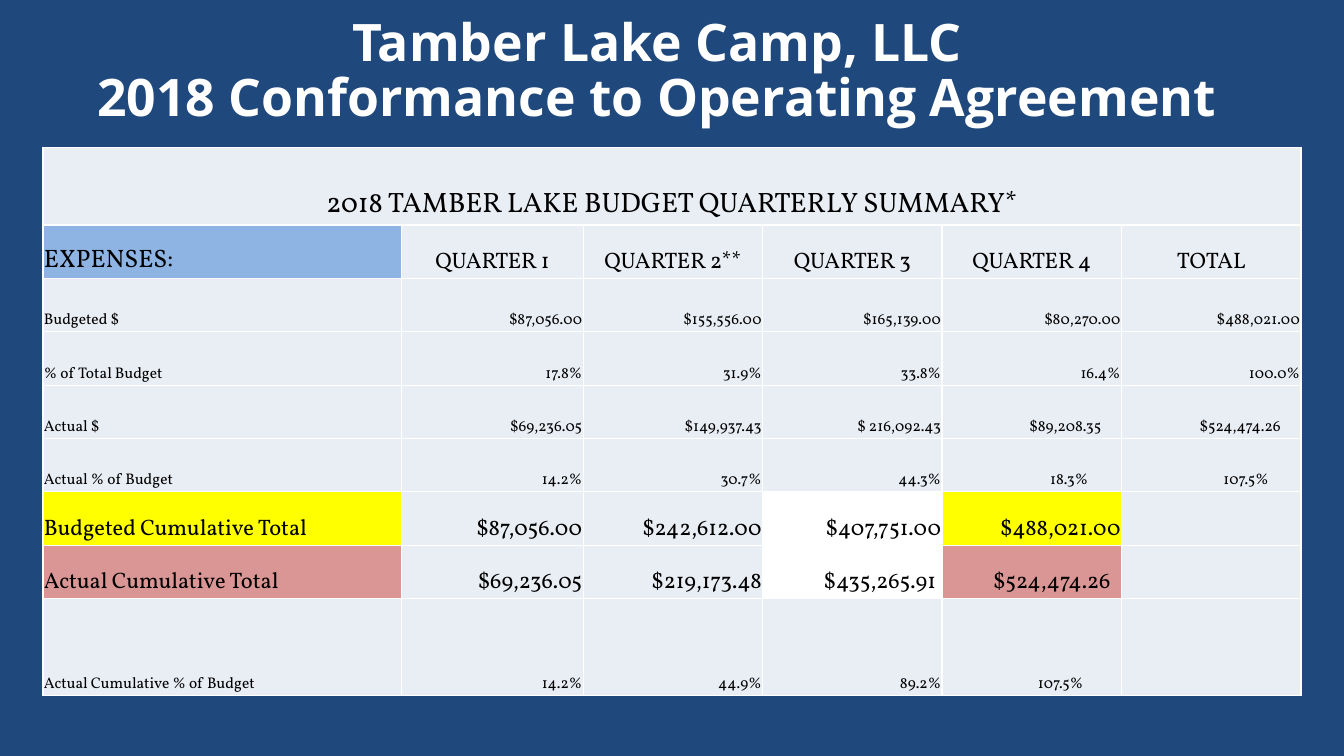
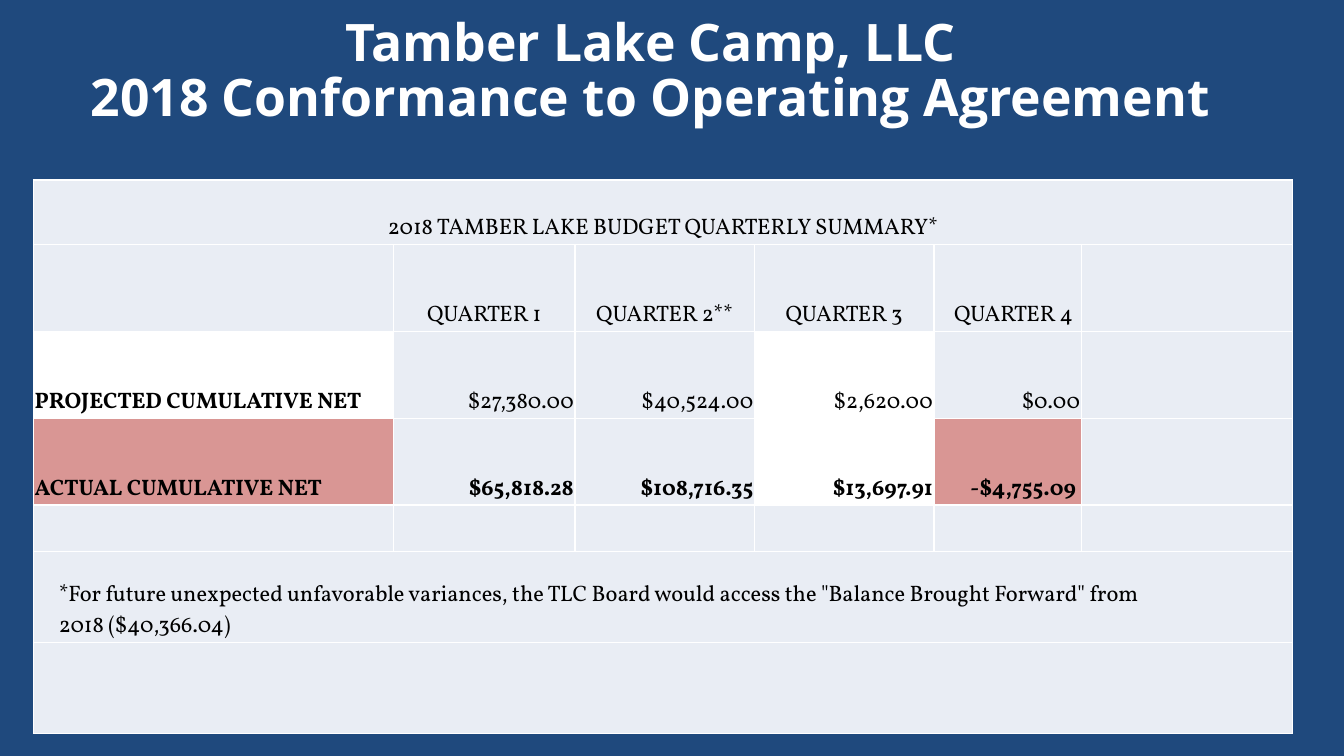
from dataclasses import dataclass

from lxml.etree import SubElement
from pptx import Presentation
from pptx.dml.color import RGBColor as Color
from pptx.enum.text import MSO_ANCHOR as Anchor, MSO_AUTO_SIZE as AutoSize, PP_ALIGN as Align
from pptx.oxml.ns import qn
from pptx.util import Inches, Pt


@dataclass(frozen=True)
class Theme:
    navy: str = "1F497D"
    white: str = "FFFFFF"
    black: str = "000000"
    mist: str = "E9EDF4"
    sky: str = "8EB4E3"
    yellow: str = "FFFF00"
    rose: str = "D99694"
    title_font: str = "Open Sans"
    table_font: str = "Vollkorn"
    title_size: float = 36.9
    banner_size: int = 20
    label_size: int = 18
    large_size: int = 16
    small_size: int = 11
    border: float = 1
    inset: float = 0.01


theme = Theme()


def write(frame, text, font=theme.table_font, size=theme.large_size, color=theme.black,
          bold=False, align=Align.LEFT, spacing=None):
    for number, line in enumerate(text.split("\n")):
        para = frame.add_paragraph() if number else frame.paragraphs[0]
        para.alignment = align
        para.line_spacing = spacing
        span = para.add_run()
        span.text = line
        span.font.name = font
        span.font.size = Pt(size)
        span.font.bold = bold
        span.font.color.rgb = Color.from_string(color)


def add_borders(cell):
    properties = cell._tc.get_or_add_tcPr()
    for side in ("a:lnL", "a:lnR", "a:lnT", "a:lnB"):
        line = SubElement(properties, qn(side), w=str(Pt(theme.border)))
        fill = SubElement(line, qn("a:solidFill"))
        SubElement(fill, qn("a:srgbClr"), val=theme.white)


quarters = ["QUARTER 1", "QUARTER 2**", "QUARTER 3", "QUARTER 4"]
banner = "2018 TAMBER LAKE BUDGET QUARTERLY SUMMARY*"
large, small = theme.large_size, theme.small_size

sheets = [
    {
        "place": (0.032, 0.195, 0.936, 0.725),
        "title_shift": 0.29,
        "columns": [3.56, 1.8, 1.78, 1.78, 1.78, 1.78],
        "heights": [0.77] + [0.53] * 7 + [0.96],
        "sizes": [theme.banner_size, large, small, small, small, small, large, large, small],
        "rows": [
            [banner],
            ["EXPENSES:", *quarters, "TOTAL"],
            ["Budgeted $", "$87,056.00", "$155,556.00", "$165,139.00", "$80,270.00", "$488,021.00"],
            ["% of Total Budget", "17.8%", "31.9%", "33.8%", "16.4%", "100.0%"],
            ["Actual $", "$69,236.05", "$149,937.43", "$ 216,092.43", "$89,208.35", "$524,474.26"],
            ["Actual % of Budget", "14.2%", "30.7%", "44.3%", "18.3%", "107.5%"],
            ["Budgeted Cumulative Total", "$87,056.00", "$242,612.00", "$407,751.00", "$488,021.00", ""],
            ["Actual Cumulative Total", "$69,236.05", "$219,173.48", "$435,265.91", "$524,474.26", ""],
            ["Actual Cumulative % of Budget", "14.2%", "44.9%", "89.2%", "107.5%", ""],
        ],
        "fills": {(1, 0): theme.sky, (6, 0): theme.yellow, (6, 3): theme.white, (6, 4): theme.yellow,
                  (7, 0): theme.rose, (7, 3): theme.white, (7, 4): theme.rose},
        "left_insets": {},
        "right_insets": {(4, 4): 0.2, (4, 5): 0.2, (5, 4): 0.33, (5, 5): 0.32,
                         (7, 3): 0.06, (7, 4): 0.11, (8, 4): 0.38},
        "label_cells": {(1, 0)},
        "bold_cells": set(),
    },
    {
        "place": (0.025, 0.238, 0.937, 0.732),
        "title_shift": 0.42,
        "columns": [3.57, 1.8, 1.78, 1.78, 1.46, 2.1],
        "heights": [0.64, 0.86, 0.86, 0.86, 0.46, 0.9, 0.9],
        "sizes": [large] * 7,
        "rows": [
            [banner],
            ["", *quarters, ""],
            ["PROJECTED CUMULATIVE NET", "$27,380.00", "$40,524.00", "$2,620.00", "$0.00", ""],
            ["ACTUAL CUMULATIVE NET", "$65,818.28", "$108,716.35", "$13,697.91", "-$4,755.09", ""],
            [""] * 6,
            ['*For future unexpected unfavorable variances, the TLC Board would access the '
             '"Balance Brought Forward" from\n2018 ($40,366.04)'],
            [""],
        ],
        "fills": {(2, 0): theme.white, (2, 3): theme.white, (3, 0): theme.rose,
                  (3, 3): theme.white, (3, 4): theme.rose},
        "left_insets": {(1, 4): 0.13, (5, 0): 0.25},
        "right_insets": {(3, 4): 0.05},
        "label_cells": set(),
        "bold_cells": {(2, 0)} | {(3, column) for column in range(5)},
    },
]

deck = Presentation()
deck.slide_width, deck.slide_height = Inches(13.33), Inches(7.5)
wide, high = deck.slide_width, deck.slide_height
background = deck.slide_master.background.fill
background.solid()
background.fore_color.rgb = Color.from_string(theme.navy)

for sheet in sheets:
    page = deck.slides.add_slide(deck.slide_layouts[5])

    title = page.shapes.title
    title.left, title.top = int(wide * 0.05), int(high * 0.012)
    title.width, title.height = int(wide * 0.9), int(high * 0.167)
    frame = title.text_frame
    frame.word_wrap = True
    frame.auto_size = AutoSize.NONE
    frame.vertical_anchor = Anchor.MIDDLE
    write(frame, "Tamber Lake Camp, LLC\n2018 Conformance to Operating Agreement",
          font=theme.title_font, size=theme.title_size, color=theme.white,
          bold=True, align=Align.CENTER, spacing=0.9)
    frame.paragraphs[0]._p.get_or_add_pPr().set("marR", str(Inches(sheet["title_shift"])))

    columns, heights = sheet["columns"], sheet["heights"]
    left, top, width, height = sheet["place"]
    box = page.shapes.add_table(len(heights), len(columns), int(wide * left), int(high * top),
                                int(wide * width), int(high * height))
    table = box.table
    table.first_row = table.horz_banding = False
    for column, share in zip(table.columns, columns):
        column.width = int(wide * width * share / sum(columns))
    for row, share in zip(table.rows, heights):
        row.height = int(high * height * share / sum(heights))

    for r, texts in enumerate(sheet["rows"]):
        merged = len(texts) == 1
        for c in range(len(columns)):
            cell, spot = table.cell(r, c), (r, c)
            add_borders(cell)
            cell.fill.solid()
            cell.fill.fore_color.rgb = Color.from_string(sheet["fills"].get(spot, theme.mist))
            cell.vertical_anchor = Anchor.BOTTOM
            cell.margin_left = Inches(sheet["left_insets"].get(spot, theme.inset))
            cell.margin_right = Inches(sheet["right_insets"].get(spot, theme.inset))
            cell.margin_top, cell.margin_bottom = Inches(theme.inset), 0
            if c >= len(texts) or not texts[c]:
                continue
            if r == 0 or (r == 1 and c > 0):
                align = Align.CENTER
            else:
                align = Align.RIGHT if c > 0 else Align.LEFT
            size = theme.label_size if spot in sheet["label_cells"] else sheet["sizes"][r]
            write(cell.text_frame, texts[c], size=size, align=align,
                  bold=spot in sheet["bold_cells"])
        if merged:
            table.cell(r, 0).merge(table.cell(r, len(columns) - 1))

deck.save("out.pptx")
